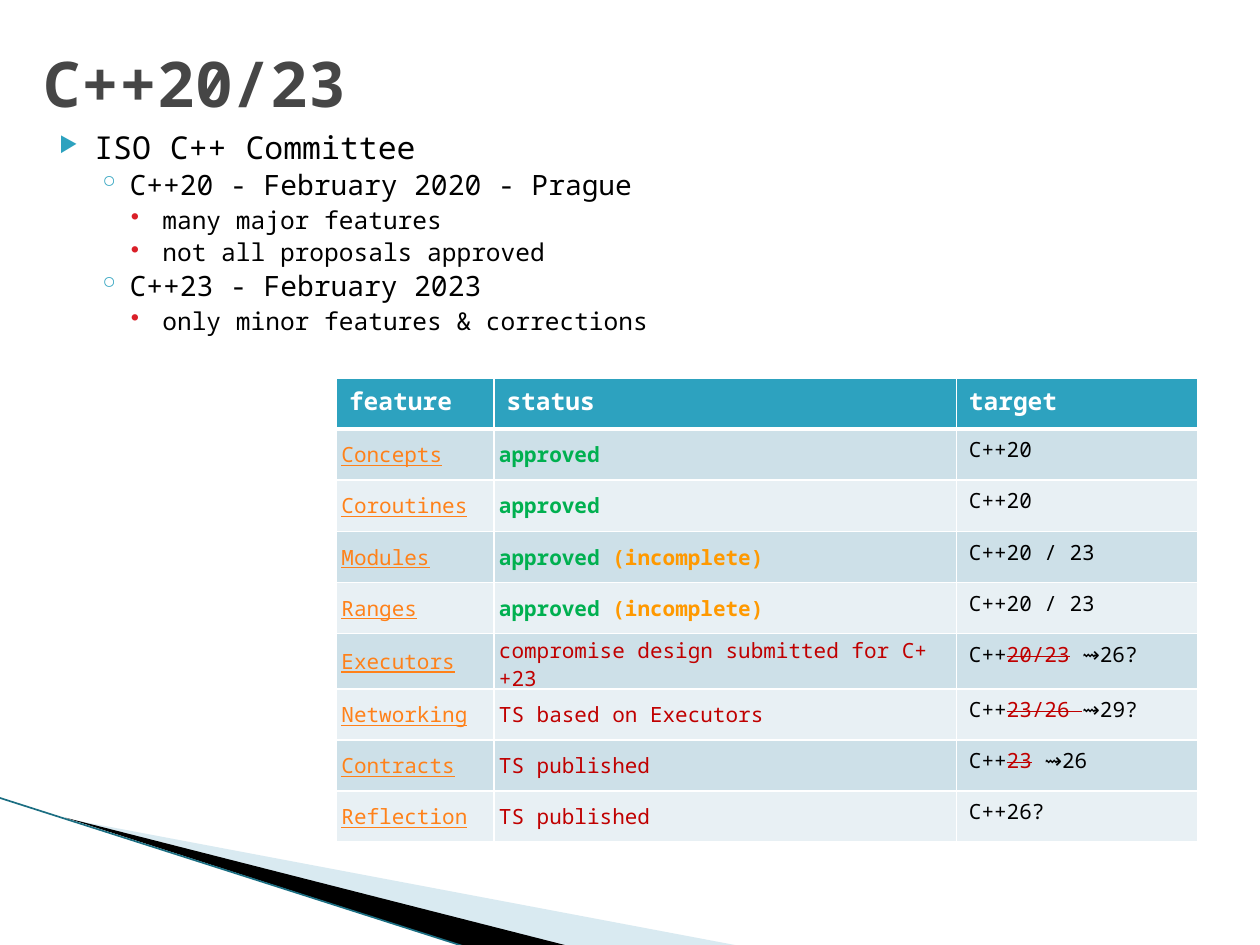
from lxml import etree
from pptx import Presentation
from pptx.dml.color import RGBColor
from pptx.enum.shapes import MSO_CONNECTOR
from pptx.enum.text import MSO_ANCHOR
from pptx.oxml.ns import qn
from pptx.util import Inches, Pt

FONT = "Noto Sans Mono"
GREEN, AMBER, RED = "00B050", "FF9900", "C00000"
LEVELS = [
    dict(size=18, margin=0.4, hang=0.28, before=4, bullet="▶", tint="2DA2BF", scale=68),
    dict(size=16, margin=0.68, hang=0.25, before=3.2, bullet="◦", tint="2DA2BF", scale=100),
    dict(size=14, margin=0.94, hang=0.25, before=3.5, bullet="•", tint="DA1F28", scale=100),
]
OUTLINE = [
    (0, "ISO C++ Committee"),
    (1, "C++20 - February 2020 - Prague"),
    (2, "many major features"),
    (2, "not all proposals approved"),
    (1, "C++23 - February 2023"),
    (2, "only minor features & corrections"),
]
APPROVED = [("approved", GREEN)]
INCOMPLETE = [("approved ", GREEN), ("(incomplete)", AMBER)]
PUBLISHED = [("TS published", RED)]
FEATURES = [
    ("Concepts", APPROVED, ("C++20", "", "")),
    ("Coroutines", APPROVED, ("C++20", "", "")),
    ("Modules", INCOMPLETE, ("C++20 / 23", "", "")),
    ("Ranges", INCOMPLETE, ("C++20 / 23", "", "")),
    ("Executors", [("compromise design submitted for C++23", RED)], ("C++", "20/23", " ⇝26?")),
    ("Networking", [("TS based on Executors", RED)], ("C++", "23/26 ", "⇝29?")),
    ("Contracts", PUBLISHED, ("C++", "23", " ⇝26")),
    ("Reflection", PUBLISHED, ("C++26?", "", "")),
]


def rgb(value):
    return RGBColor.from_string(value)


def add_text(paragraph, text, size=12, color="000000", bold=False, underline=False, strike=False):
    run = paragraph.add_run()
    run.text = text
    font = run.font
    font.name, font.size, font.bold, font.underline = FONT, Pt(size), bold, underline
    font.color.rgb = rgb(color)
    if strike:
        run._r.get_or_add_rPr().set("strike", "sngStrike")


def add_frame(slide, box):
    frame = slide.shapes.add_textbox(*map(Inches, box)).text_frame
    frame.word_wrap = True
    return frame


def add_bullet(paragraph, level):
    props = paragraph._p.get_or_add_pPr()
    props.set("marL", str(Inches(level["margin"])))
    props.set("indent", str(-Inches(level["hang"])))
    tint = etree.SubElement(props, qn("a:buClr"))
    etree.SubElement(tint, qn("a:srgbClr"), val=level["tint"])
    etree.SubElement(props, qn("a:buSzPct"), val=str(level["scale"] * 1000))
    etree.SubElement(props, qn("a:buChar"), char=level["bullet"])


def add_title(slide, box):
    frame = add_frame(slide, box)
    frame.vertical_anchor = MSO_ANCHOR.MIDDLE
    add_text(frame.paragraphs[0], "C++20/23", size=36, color="464646", bold=True)


def add_outline(slide, box):
    frame = add_frame(slide, box)
    for index, (depth, text) in enumerate(OUTLINE):
        level = LEVELS[depth]
        paragraph = frame.add_paragraph() if index else frame.paragraphs[0]
        add_bullet(paragraph, level)
        paragraph.line_spacing = 0.9
        paragraph.space_before = Pt(level["before"] if index else 0)
        add_text(paragraph, text, size=level["size"])


def add_wedge(slide, box, points, color, opacity=100):
    left, top, width, height = box
    corners = [(Inches(left + x * width), Inches(top + y * height)) for x, y in points]
    builder = slide.shapes.build_freeform(*corners[0])
    builder.add_line_segments(corners[1:])
    wedge = builder.convert_to_shape()
    wedge.shadow.inherit = False
    wedge.fill.solid()
    wedge.fill.fore_color.rgb = rgb(color)
    wedge.line.fill.background()
    if opacity < 100:
        fill = wedge._element.spPr.find(qn("a:solidFill"))
        etree.SubElement(fill[0], qn("a:alpha"), val=str(opacity * 1000))


def add_corner(slide, box):
    left, top, width, height = box
    right, bottom = left + width, top + height
    add_wedge(slide, (left + 0.55, top + 0.17, 5.4, height - 0.17),
              [(0, 0), (1, 1), (0.74, 1)], "A0CBDC", opacity=40)
    add_wedge(slide, (left + 0.53, top + 0.16, 4.04, height - 0.16),
              [(0, 0), (1, 1), (0.79, 1)], "000000")
    edge = slide.shapes.add_connector(
        MSO_CONNECTOR.STRAIGHT, *map(Inches, (left, top, right, bottom)))
    edge.line.color.rgb = rgb("1B6E82")
    edge.line.width = Pt(0.95)
    etree.SubElement(edge._element.spPr, qn("a:effectLst"))


def style_cell(cell, color, bottom=1, tight=False):
    if tight:
        cell.vertical_anchor = MSO_ANCHOR.MIDDLE
        cell.margin_left = cell.margin_right = Inches(0.04)
        cell.margin_top = cell.margin_bottom = Inches(0.02)
    props = cell._tc.get_or_add_tcPr()
    for side, width in (("L", 1), ("R", 1), ("T", 1), ("B", bottom)):
        border = etree.SubElement(props, qn(f"a:ln{side}"), w=str(Pt(width)))
        fill = etree.SubElement(border, qn("a:solidFill"))
        etree.SubElement(fill, qn("a:srgbClr"), val="FFFFFF")
    cell.fill.solid()
    cell.fill.fore_color.rgb = rgb(color)


def add_features(slide, box):
    table = slide.shapes.add_table(len(FEATURES) + 1, 3, *map(Inches, box)).table
    for column, width in zip(table.columns, (1.25, 3.67, 1.92)):
        column.width = Inches(width)
    for cell, heading in zip(table.rows[0].cells, ("feature", "status", "target")):
        style_cell(cell, "2DA2BF", bottom=3)
        add_text(cell.text_frame.paragraphs[0], heading, size=14, color="FFFFFF", bold=True)
    for index, (feature, status, target) in enumerate(FEATURES, start=1):
        cells = list(table.rows[index].cells)
        for column, cell in enumerate(cells):
            style_cell(cell, "CDE0E8" if index % 2 else "E8F0F4", tight=column < 2)
        feature_line, status_line, target_line = (c.text_frame.paragraphs[0] for c in cells)
        add_text(feature_line, feature, color="FF8119", underline=True)
        for text, color in status:
            add_text(status_line, text, color=color, bold=color != RED)
        start, dropped, revised = target
        add_text(target_line, start)
        if dropped:
            add_text(target_line, dropped, color=RED, strike=True)
            add_text(target_line, revised)


def main():
    deck = Presentation()
    deck.slide_width, deck.slide_height = Inches(10), Inches(7.5)
    slide = deck.slides.add_slide(deck.slide_layouts[6])
    add_corner(slide, (-0.01, 6.33, 3.72, 1.19))
    add_outline(slide, (0.25, 1, 9.58, 6.33))
    add_title(slide, (0.25, 0.3, 9.58, 0.7))
    add_features(slide, (2.67, 3, 6.84, 3.65))
    deck.save("out.pptx")


if __name__ == "__main__":
    main()
